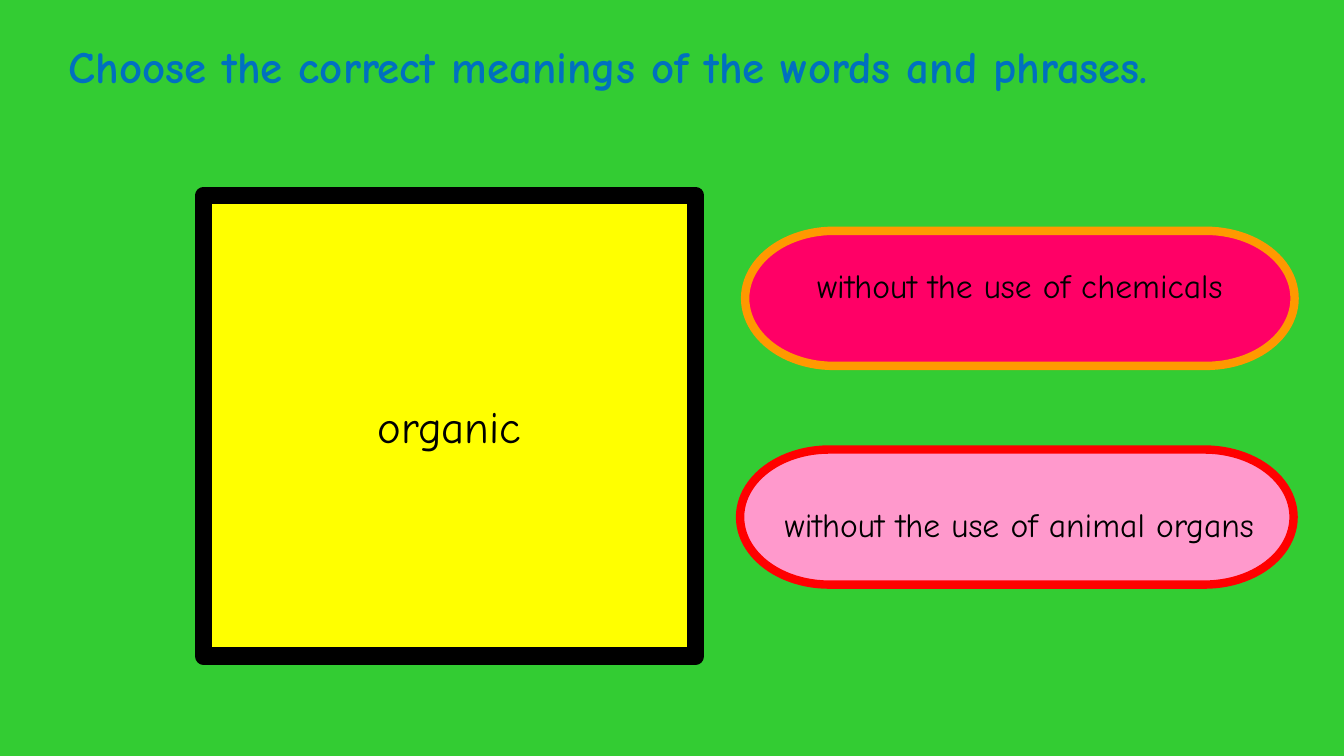
from dataclasses import dataclass

from pptx import Presentation
from pptx import util as u
from pptx.dml.color import RGBColor
from pptx.enum import shapes, text


@dataclass(frozen=True)
class Theme:
    """Colours, font and type sizes of the slide."""
    font: str = "Comic Neue"
    background: str = "33CC33"
    title: str = "0070C0"
    ink: str = "000000"
    card: str = "FFFF00"
    large: int = 32
    small: int = 24


THEME = Theme()


def inches(box):
    """Convert a box of left, top, width and height to lengths."""
    return [u.Inches(value) for value in box]


def write(shape, wording, size, color, align, anchor, bold=False, wrap=True):
    """Put one formatted paragraph into a shape."""
    frame = shape.text_frame
    frame.text = wording
    frame.word_wrap = wrap
    frame.auto_size = text.MSO_AUTO_SIZE.NONE
    frame.vertical_anchor = anchor
    paragraph = frame.paragraphs[0]
    paragraph.alignment = align
    paragraph.font.name = THEME.font
    paragraph.font.size = u.Pt(size)
    paragraph.font.bold = bold
    paragraph.font.color.rgb = RGBColor.from_string(color)


def add_panel(parent, kind, box, fill, line, width):
    """Add a filled, outlined preset shape without a shadow."""
    panel = parent.add_shape(kind, *inches(box))
    panel.shadow.inherit = False
    panel.fill.solid()
    panel.fill.fore_color.rgb = RGBColor.from_string(fill)
    panel.line.color.rgb = RGBColor.from_string(line)
    panel.line.width = u.Pt(width)
    return panel


def add_title(slide, box, wording):
    """Place the instruction in the title placeholder."""
    title = slide.shapes.title
    title.left, title.top, title.width, title.height = inches(box)
    write(title, wording, THEME.large, THEME.title, text.PP_ALIGN.LEFT,
          text.MSO_ANCHOR.TOP, bold=True)


def add_word_card(slide, box, word):
    """Draw the framed card with the word to explain."""
    card = add_panel(slide.shapes, shapes.MSO_SHAPE.RECTANGLE, box,
                     THEME.card, THEME.ink, 12.5)
    write(card, word, THEME.large, THEME.ink, text.PP_ALIGN.CENTER,
          text.MSO_ANCHOR.MIDDLE, wrap=False)


def add_answer(slide, box, label_offset, label_width, wording, fill, line):
    """Group an answer pill with its label, set relative to the pill."""
    group = slide.shapes.add_group_shape().shapes
    add_panel(group, shapes.MSO_SHAPE.FLOWCHART_TERMINATOR, box, fill, line, 6)
    left, top = box[0] + label_offset[0], box[1] + label_offset[1]
    label = group.add_textbox(*inches((left, top, label_width, 0.5)))
    write(label, wording, THEME.small, THEME.ink, text.PP_ALIGN.CENTER,
          text.MSO_ANCHOR.TOP)


def main():
    """Build and save the quiz slide."""
    presentation = Presentation()
    presentation.slide_width = u.Inches(13.33)
    presentation.slide_height = u.Inches(7.5)
    slide = presentation.slides.add_slide(presentation.slide_layouts[5])
    slide.background.fill.solid()
    slide.background.fill.fore_color.rgb = RGBColor.from_string(THEME.background)

    add_title(slide, (0.58, 0.33, 12.75, 0.64),
              "Choose the correct meanings of the words and phrases.")
    add_word_card(slide, (2.02, 1.94, 4.88, 4.57), "organic")
    add_answer(slide, (7.39, 2.29, 5.45, 1.34), (0.17, 0.29), 5.11,
               "without the use of chemicals", "FF0066", "FF9900")
    add_answer(slide, (7.34, 4.46, 5.49, 1.34), (-0.11, 0.49), 5.76,
               "without the use of animal organs", "FF99CC", "FF0000")
    presentation.save("out.pptx")


if __name__ == "__main__":
    main()
